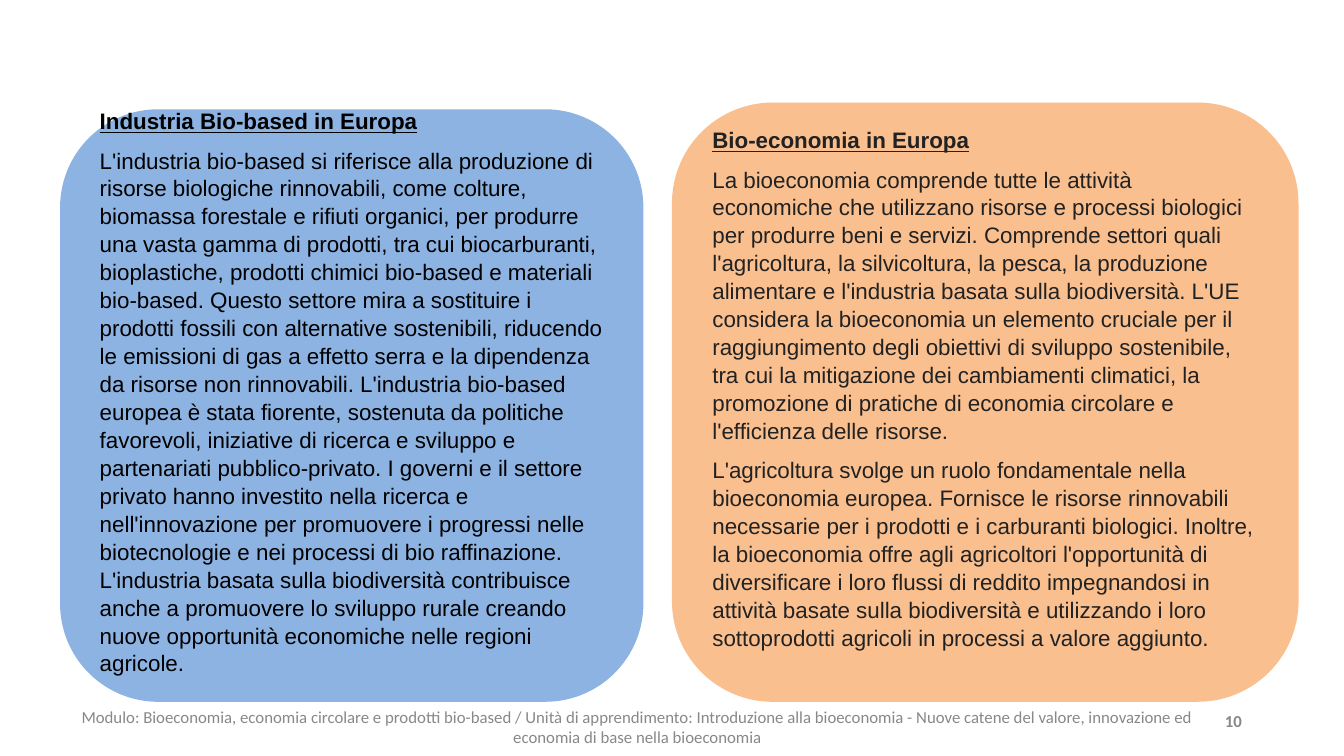
import pptx
import pptx.util
import pptx.dml.color
import pptx.enum.shapes
import pptx.enum.text

Cm, Pt = pptx.util.Cm, pptx.util.Pt
RGB = pptx.dml.color.RGBColor.from_string
ALIGN = pptx.enum.text.PP_ALIGN

# Content: each body paragraph is a list of sentences
PANELS = [
    {
        "box": (1.55, 2.79, 14.63, 14.86), "fill": "blue", "ink": "black",
        "title": "Industria Bio-based in Europa",
        "body": [[
            "L'industria bio-based si riferisce alla produzione di risorse biologiche "
            "rinnovabili, come colture, biomassa forestale e rifiuti organici, per produrre "
            "una vasta gamma di prodotti, tra cui biocarburanti, bioplastiche, prodotti "
            "chimici bio-based e materiali bio-based.",
            "Questo settore mira a sostituire i prodotti fossili con alternative "
            "sostenibili, riducendo le emissioni di gas a effetto serra e la dipendenza "
            "da risorse non rinnovabili.",
            "L'industria bio-based europea è stata fiorente, sostenuta da politiche "
            "favorevoli, iniziative di ricerca e sviluppo e partenariati pubblico-privato.",
            "I governi e il settore privato hanno investito nella ricerca e "
            "nell'innovazione per promuovere i progressi nelle biotecnologie e nei "
            "processi di bio raffinazione.",
            "L'industria basata sulla biodiversità contribuisce anche a promuovere lo "
            "sviluppo rurale creando nuove opportunità economiche nelle regioni agricole.",
        ]],
    },
    {
        "box": (16.97, 2.62, 15.72, 15.03), "fill": "orange", "ink": "dark",
        "title": "Bio-economia in Europa",
        "body": [[
            "La bioeconomia comprende tutte le attività economiche che utilizzano risorse e "
            "processi biologici per produrre beni e servizi.",
            "Comprende settori quali l'agricoltura, la silvicoltura, la pesca, la "
            "produzione alimentare e l'industria basata sulla biodiversità.",
            "L'UE considera la bioeconomia un elemento cruciale per il raggiungimento "
            "degli obiettivi di sviluppo sostenibile, tra cui la mitigazione dei "
            "cambiamenti climatici, la promozione di pratiche di economia circolare e "
            "l'efficienza delle risorse.",
        ], [
            "L'agricoltura svolge un ruolo fondamentale nella bioeconomia europea.",
            "Fornisce le risorse rinnovabili necessarie per i prodotti e i carburanti "
            "biologici.",
            "Inoltre, la bioeconomia offre agli agricoltori l'opportunità di diversificare "
            "i loro flussi di reddito impegnandosi in attività basate sulla biodiversità e "
            "utilizzando i loro sottoprodotti agricoli in processi a valore aggiunto.",
        ]],
    },
]
FOOTER = ("Modulo: Bioeconomia, economia circolare e prodotti bio-based / Unità di "
          "apprendimento: Introduzione alla bioeconomia - Nuove catene del valore, "
          "innovazione ed economia di base nella bioeconomia")
FOOTER_BOX = (1.65, 18.14, 28.83, 0.36)
PAGE = "10"
PAGE_BOX = (30.28, 17.65, 1.27, 1.02)

THEME = {
    "blue": "8DB3E2", "orange": "FABF8F",
    "black": "000000", "dark": "222222", "gray": "888888",
    "body_font": "Arial", "foot_font": "Calibri",
    "body_size": 16, "foot_size": 12,
}


def add_text(tf, text, first=True, role="body", ink="black", bold=False,
             underline=False, align=ALIGN.LEFT, before=0, spacing=None):
    p = tf.paragraphs[0] if first else tf.add_paragraph()
    p.alignment = align
    p.space_before = Pt(before)
    if spacing:
        p.line_spacing = spacing
    r = p.add_run()
    r.text = text
    r.font.name = THEME[role + "_font"]
    r.font.size = Pt(THEME[role + "_size"])
    r.font.color.rgb = RGB(THEME[ink])
    r.font.bold = bold
    r.font.underline = underline


def set_frame(tf, bottom=0.13):
    tf.word_wrap = True
    tf.vertical_anchor = pptx.enum.text.MSO_ANCHOR.MIDDLE
    tf.margin_left = tf.margin_right = Cm(0.25)
    tf.margin_top, tf.margin_bottom = Cm(0.13), Cm(bottom)


def add_panel(s, panel):
    sp = s.shapes.add_shape(pptx.enum.shapes.MSO_SHAPE.ROUNDED_RECTANGLE,
                            *map(Cm, panel["box"]))
    sp.shadow.inherit = False
    color = RGB(THEME[panel["fill"]])
    sp.fill.solid()
    sp.fill.fore_color.rgb = color
    sp.line.color.rgb = color
    sp.line.width = Pt(2)
    # A deeper bottom margin lifts the centred text
    tf = sp.text_frame
    set_frame(tf, bottom=0.84)
    add_text(tf, panel["title"], ink=panel["ink"], bold=True, underline=True, spacing=1.04)
    for sentences in panel["body"]:
        add_text(tf, " ".join(sentences), first=False, ink=panel["ink"], before=8,
                 spacing=1.04)


def add_label(s, box, text, **fmt):
    tf = s.shapes.add_textbox(*map(Cm, box)).text_frame
    set_frame(tf)
    add_text(tf, text, role="foot", ink="gray", **fmt)


def main():
    prs = pptx.Presentation()
    prs.slide_width, prs.slide_height = Cm(33.87), Cm(19.05)
    s = prs.slides.add_slide(prs.slide_layouts[6])

    # Two panels
    for panel in PANELS:
        add_panel(s, panel)

    # Footer and page number
    add_label(s, FOOTER_BOX, FOOTER, align=ALIGN.CENTER)
    add_label(s, PAGE_BOX, PAGE, align=ALIGN.RIGHT, bold=True)

    prs.save("out.pptx")


if __name__ == "__main__":
    main()
